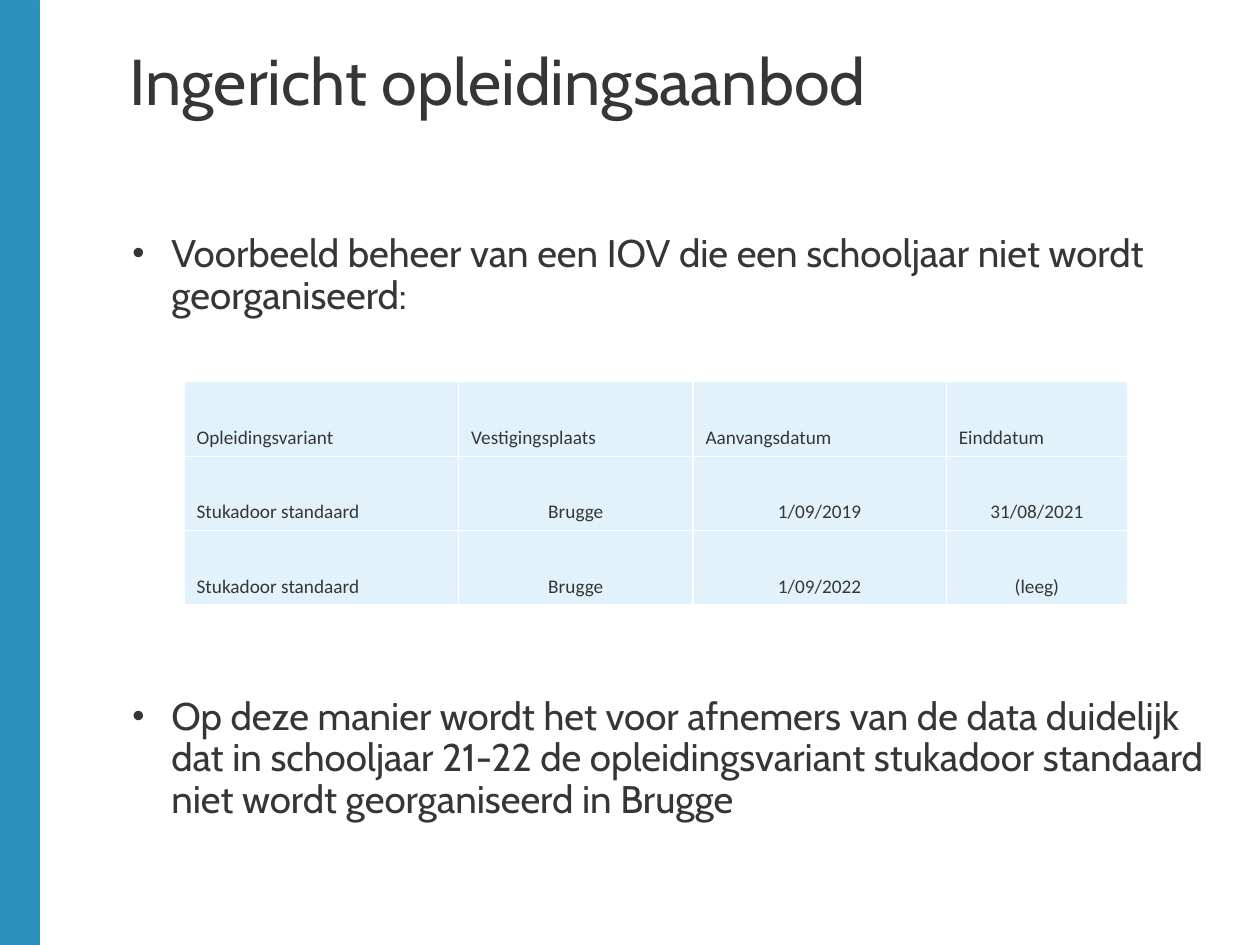
from lxml import etree
from pptx import Presentation
from pptx.dml.color import RGBColor
from pptx.enum.shapes import MSO_SHAPE
from pptx.enum.text import MSO_ANCHOR, PP_ALIGN
from pptx.oxml.ns import qn
from pptx.util import Inches, Pt

RECTANGLE = MSO_SHAPE.RECTANGLE
TOP, BOTTOM = MSO_ANCHOR.TOP, MSO_ANCHOR.BOTTOM
LEFT, CENTER = PP_ALIGN.LEFT, PP_ALIGN.CENTER

COLORS = {"bar": "2B92BE", "text": "373636", "cell": "E1F2FA", "border": "FFFFFF"}
TITLE = "Ingericht opleidingsaanbod"
BULLETS = [
    "Voorbeeld beheer van een IOV die een schooljaar niet wordt georganiseerd:",
    "Op deze manier wordt het voor afnemers van de data duidelijk dat in schooljaar "
    "21-22 de opleidingsvariant stukadoor standaard niet wordt georganiseerd in Brugge",
]
TABLE_GAP = Pt(217)  # room for the table between the two bullets
COLUMN_WIDTHS = [2.18, 1.86, 2.01, 1.44]
ROW_HEIGHT = 0.59
ROWS = [
    ["Opleidingsvariant", "Vestigingsplaats", "Aanvangsdatum", "Einddatum"],
    ["Stukadoor standaard", "Brugge", "1/09/2019", "31/08/2021"],
    ["Stukadoor standaard", "Brugge", "1/09/2022", "(leeg)"],
]


def color(name):
    return RGBColor.from_string(COLORS[name])


def add_span(para, text, size, font):
    span = para.add_run()
    span.text = text
    span.font.size = Pt(size)
    span.font.name = font
    span.font.color.rgb = color("text")


def add_text_frame(page, left, top, width, height):
    box = page.shapes.add_textbox(Inches(left), Inches(top), Inches(width), Inches(height))
    frame = box.text_frame
    frame.word_wrap = True
    frame.vertical_anchor = TOP
    frame.margin_left = frame.margin_right = frame.margin_top = frame.margin_bottom = 0
    return frame


def add_side_bar(page, height):
    bar = page.shapes.add_shape(RECTANGLE, 0, 0, Inches(0.31), height)
    bar.shadow.inherit = False
    bar.fill.solid()
    bar.fill.fore_color.rgb = color("bar")
    bar.line.color.rgb = color("bar")
    bar.line.width = Pt(0.5)


def add_title(page):
    para = add_text_frame(page, 1.03, 0.41, 8.52, 1.22).paragraphs[0]
    para.line_spacing = Pt(38)
    add_span(para, TITLE, 37, "Cabin")


def set_bullet(para):
    properties = para._p.get_or_add_pPr()
    properties.set("marL", str(Inches(0.31)))
    properties.set("indent", str(-Inches(0.31)))
    etree.SubElement(properties, qn("a:buSzPct"), val="90000")
    etree.SubElement(properties, qn("a:buFont"), typeface="Arial")
    etree.SubElement(properties, qn("a:buChar"), char="•")


def add_bullets(page):
    frame = add_text_frame(page, 1.05, 1.86, 8.51, 4.94)
    for index, text in enumerate(BULLETS):
        para = frame.add_paragraph() if index else frame.paragraphs[0]
        set_bullet(para)
        para.line_spacing = 0.9
        if index:
            para.space_before = TABLE_GAP
        add_span(para, text, 22, "Cabin")


def set_borders(cell):
    properties = cell._tc.get_or_add_tcPr()
    for position, side in enumerate(("a:lnL", "a:lnR", "a:lnT", "a:lnB")):
        line = etree.Element(qn(side), w=str(Pt(0.75)))
        fill = etree.SubElement(line, qn("a:solidFill"))
        etree.SubElement(fill, qn("a:srgbClr"), val=COLORS["border"])
        properties.insert(position, line)


def add_schedule_table(page):
    table = page.shapes.add_table(
        len(ROWS), len(COLUMN_WIDTHS), Inches(1.46), Inches(3.03),
        Inches(sum(COLUMN_WIDTHS)), Inches(ROW_HEIGHT * len(ROWS)),
    ).table
    for column, width in zip(table.columns, COLUMN_WIDTHS):
        column.width = Inches(width)
    for row_index, texts in enumerate(ROWS):
        table.rows[row_index].height = Inches(ROW_HEIGHT)
        for column_index, text in enumerate(texts):
            cell = table.cell(row_index, column_index)
            cell.fill.solid()
            cell.fill.fore_color.rgb = color("cell")
            cell.vertical_anchor = BOTTOM
            set_borders(cell)
            para = cell.text_frame.paragraphs[0]
            para.alignment = CENTER if row_index and column_index else LEFT
            add_span(para, text, 11, "Calibri")
            # Header cells keep the same weight as the body
            para.runs[0].font.bold = False


def main():
    deck = Presentation()
    deck.slide_width, deck.slide_height = Inches(10), Inches(7.5)
    page = deck.slides.add_slide(deck.slide_layouts[6])

    # Frame of the slide
    add_side_bar(page, deck.slide_height)
    # Content
    add_bullets(page)
    add_title(page)
    add_schedule_table(page)

    deck.save("out.pptx")


if __name__ == "__main__":
    main()
